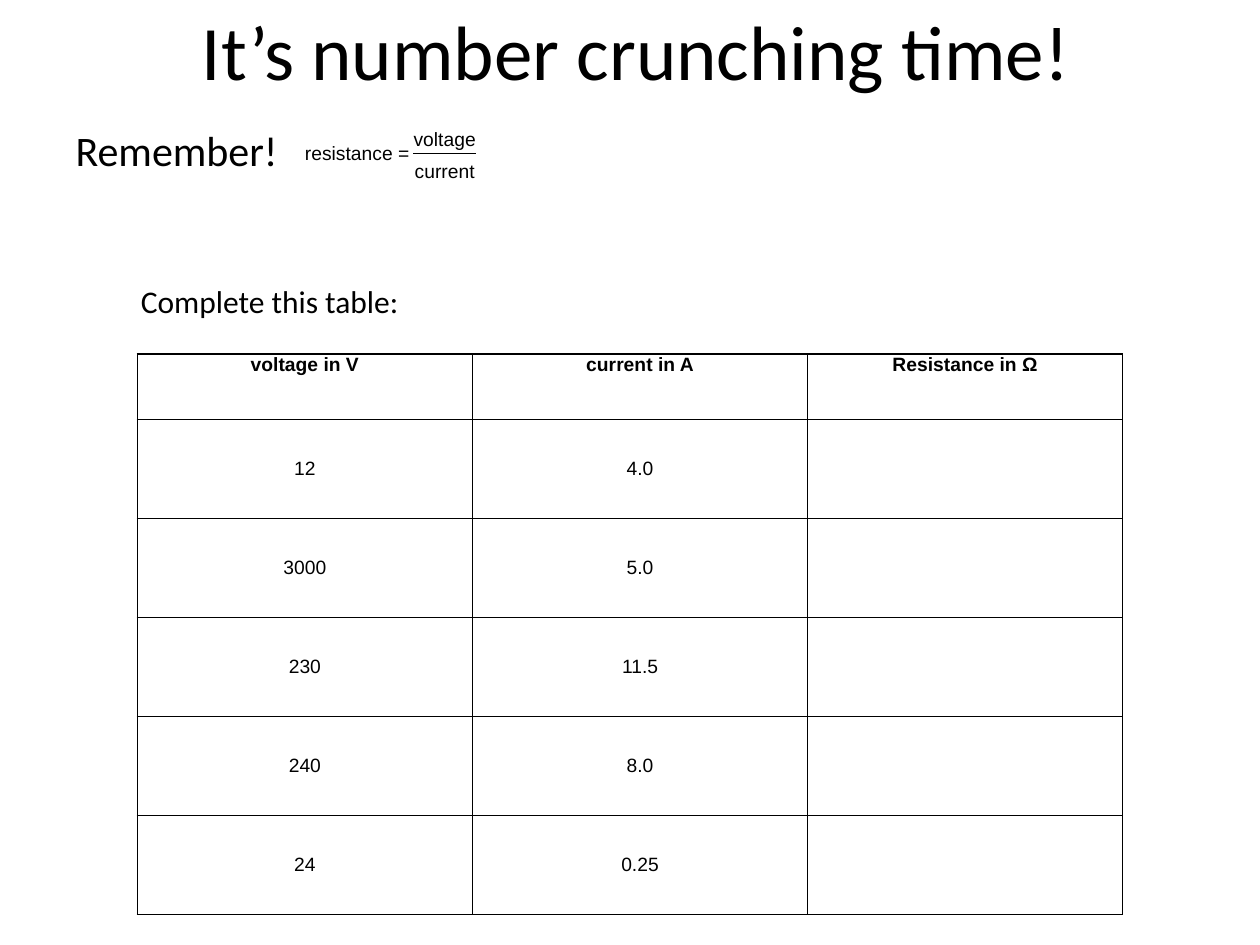
from dataclasses import dataclass
from typing import Any

import pptx
import pptx.dml.color
import pptx.enum.shapes
import pptx.enum.text
import pptx.oxml
import pptx.oxml.ns
import pptx.util

Inches = pptx.util.Inches
Pt = pptx.util.Pt
Align = pptx.enum.text.PP_ALIGN
Anchor = pptx.enum.text.MSO_ANCHOR

BLACK = pptx.dml.color.RGBColor(0, 0, 0)
BORDER = (
    '<a:{side} %s w="12700"><a:solidFill><a:srgbClr val="{ink}"/>'
    "</a:solidFill></a:{side}>" % pptx.oxml.ns.nsdecls("a")
)
SIDES = ("lnL", "lnR", "lnT", "lnB")

HEADS = ("voltage in V", "current in A", "Resistance in Ω")
READINGS = (
    ("12", "4.0"),
    ("3000", "5.0"),
    ("230", "11.5"),
    ("240", "8.0"),
    ("24", "0.25"),
)
WIDTHS = (2.66, 2.66, 2.5)
HEAD_HIGH = 0.52
TABLE_HIGH = 4.45


@dataclass
class Box:
    left: float
    top: float
    width: float
    height: float

    def place(self) -> tuple:
        return tuple(map(Inches, (self.left, self.top, self.width, self.height)))


@dataclass
class Style:
    size: float
    name: str = "Arial"
    bold: bool = False


SMALL = Style(11)
STRONG = Style(11, bold=True)
FORMULA = {"line_spacing": 0.96, "space_after": Pt(6)}
MIDDLE = {"alignment": Align.CENTER}


def assign(item: Any, values: dict) -> None:
    for key, value in values.items():
        setattr(item, key, value)


def write(frame: Any, text: str, style: Style, **layout: Any) -> None:
    """Fill a text frame, one paragraph to each line of text."""
    frame.text = text
    for para in frame.paragraphs:
        assign(para, layout)
        for run in para.runs:
            assign(run.font, {"size": Pt(style.size), "name": style.name, "bold": style.bold})
            run.font.color.rgb = BLACK


def move(shape: Any, box: Box) -> None:
    assign(shape, dict(zip(("left", "top", "width", "height"), box.place())))


def draw_formula(slide: Any) -> None:
    group = slide.shapes.add_group_shape()
    parts = (
        (Box(2.42, 1.13, 0.96, 0.16), "resistance =", True, {}),
        (Box(3.25, 1.02, 0.56, 0.58), "voltage\ncurrent", False, MIDDLE),
    )
    for box, text, wrap, extra in parts:
        frame = group.shapes.add_textbox(*box.place()).text_frame
        assign(frame, {f"margin_{side}": 0 for side in ("left", "right", "top", "bottom")})
        frame.word_wrap = wrap
        write(frame, text, SMALL, **FORMULA, **extra)
    ends = map(Inches, (3.28, 1.22, 3.78, 1.22))
    bar = group.shapes.add_connector(pptx.enum.shapes.MSO_CONNECTOR.STRAIGHT, *ends)
    bar.line.color.rgb = BLACK
    bar.line.width = Pt(0.75)
    bar._element.spPr.append(pptx.oxml.parse_xml("<a:effectLst %s/>" % pptx.oxml.ns.nsdecls("a")))


def format_cell(cell: Any) -> None:
    """Clear the fill, set the margins and rule all four sides."""
    cell.fill.background()
    assign(cell, {
        "margin_left": Inches(0.07), "margin_right": Inches(0.07),
        "margin_top": 0, "margin_bottom": 0,
    })
    props = cell._tc.get_or_add_tcPr()
    for index, side in enumerate(SIDES):
        props.insert(index, pptx.oxml.parse_xml(BORDER.format(side=side, ink=BLACK)))


def draw_table(slide: Any) -> None:
    box = Box(1.09, 2.81, sum(WIDTHS), TABLE_HIGH)
    grid = slide.shapes.add_table(len(READINGS) + 1, len(HEADS), *box.place()).table
    assign(grid, {"first_row": False, "horz_banding": False})
    for column, width in zip(grid.columns, WIDTHS):
        column.width = Inches(width)
    for index, row in enumerate(grid.rows):
        high = (TABLE_HIGH - HEAD_HIGH) / len(READINGS) if index else HEAD_HIGH
        row.height = Inches(high)
    for cell in grid.iter_cells():
        format_cell(cell)
    for col, text in enumerate(HEADS):
        write(grid.cell(0, col).text_frame, text, STRONG, space_after=Pt(6), **MIDDLE)
    for row, values in enumerate(READINGS, 1):
        for col, text in enumerate(values):
            cell = grid.cell(row, col)
            cell.vertical_anchor = Anchor.MIDDLE
            write(cell.text_frame, text, SMALL,
                  line_spacing=Pt(12), space_after=Pt(6), **MIDDLE)


def main() -> None:
    deck = pptx.Presentation()
    assign(deck, {"slide_width": Inches(10), "slide_height": Inches(7.5)})
    slide = deck.slides.add_slide(deck.slide_layouts[1])

    title, body = slide.placeholders
    move(title, Box(0.55, -0.23, 9, 1.25))
    write(title.text_frame, "It’s number crunching time!", Style(44, "Calibri"), **MIDDLE)

    move(body, Box(0.5, 0.94, 9, 5.76))
    write(body.text_frame, "Remember!", Style(24, "Calibri"), space_before=Pt(0))
    props = body.text_frame.paragraphs[0]._p.get_or_add_pPr()
    props.append(pptx.oxml.parse_xml("<a:buNone %s/>" % pptx.oxml.ns.nsdecls("a")))

    draw_formula(slide)
    draw_table(slide)

    label = slide.shapes.add_textbox(*Box(1.02, 2.19, 2.73, 0.4).place()).text_frame
    label.word_wrap = True
    write(label, "Complete this table:", Style(18, "Calibri"))
    deck.save("out.pptx")


if __name__ == "__main__":
    main()
